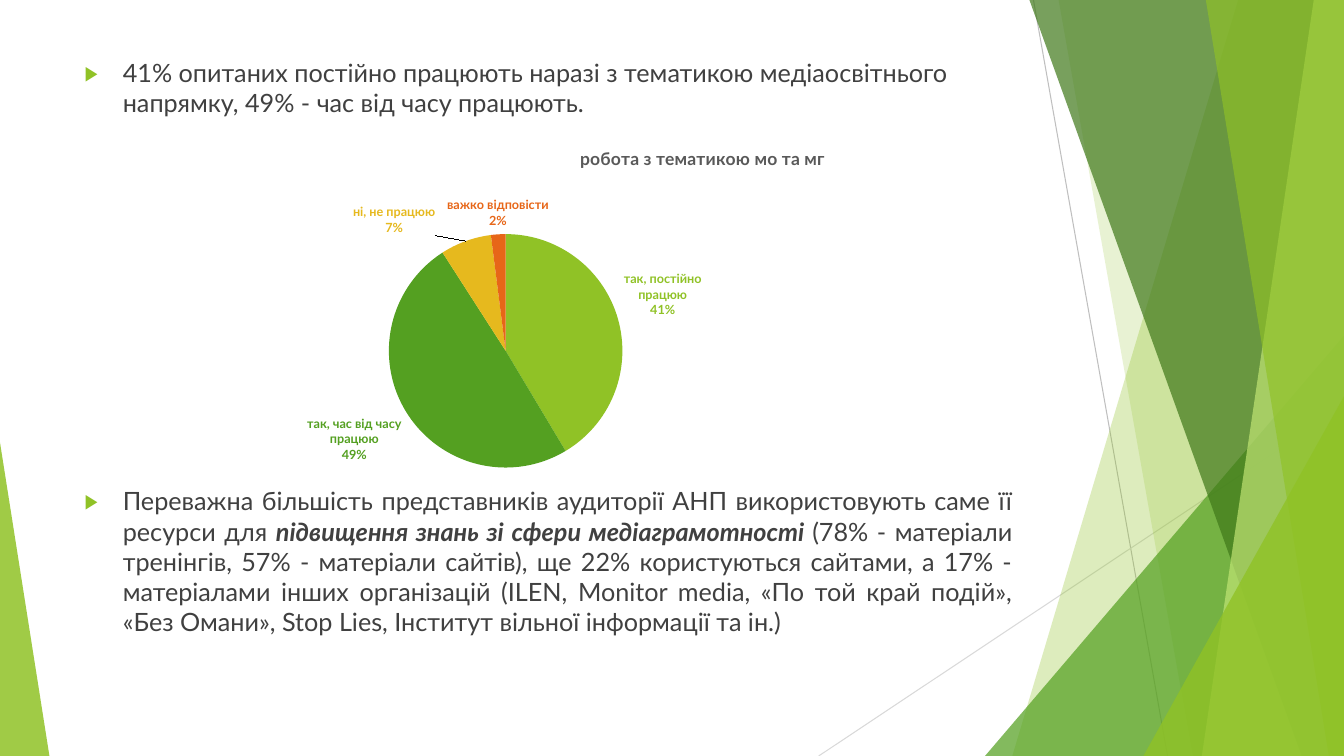
from lxml import etree
from pptx import Presentation
from pptx.chart.data import CategoryChartData
from pptx.dml.color import RGBColor
from pptx.enum.chart import XL_CHART_TYPE, XL_LABEL_POSITION
from pptx.enum.shapes import MSO_CONNECTOR, MSO_SHAPE
from pptx.enum.text import PP_ALIGN
from pptx.oxml.ns import qn
from pptx.util import Inches, Pt

PIE = XL_CHART_TYPE.PIE
OUTSIDE_END = XL_LABEL_POSITION.OUTSIDE_END
STRAIGHT = MSO_CONNECTOR.STRAIGHT
TRIANGLE = MSO_SHAPE.ISOSCELES_TRIANGLE
LEFT, JUSTIFY = PP_ALIGN.LEFT, PP_ALIGN.JUSTIFY

WIDTH, HEIGHT = 13.33, 7.5
FONT = "Lato"
COLORS = {
    "lime": "90C226", "green": "54A021", "forest": "3F7819", "pale": "C0E474",
    "yellow": "E6B91E", "orange": "E76618", "text": "404040", "title": "595959",
    "line": "BFBFBF", "light_line": "D9D9D9",
}
# Answer, percent, colour, sideways shift of the label
ANSWERS = [
    ("так, постійно працюю", 41, "lime", 0),
    ("так, час від часу працюю", 49, "green", 0),
    ("ні, не працюю", 7, "yellow", -0.05),
    ("важко відповісти", 2, "orange", 0),
]


def rgb(name):
    return RGBColor.from_string(COLORS[name])


def format_font(font, size, color, bold=False, italic=False):
    font.name, font.size = FONT, Pt(size)
    font.bold, font.italic = bold, italic
    font.color.rgb = rgb(color)


def add_text(paragraph, text, size=18, color="text", bold=False, italic=False):
    run = paragraph.add_run()
    run.text = text
    format_font(run.font, size, color, bold, italic)


def add_line(slide, start, end, color):
    line = slide.shapes.add_connector(STRAIGHT, *map(Inches, start + end))
    line.line.color.rgb = rgb(color)
    line.line.width = Pt(0.75)
    etree.SubElement(line._element.spPr, qn("a:effectLst"))


def paint(shape, color, opacity):
    shape.shadow.inherit = False
    shape.line.fill.background()
    shape.fill.solid()
    shape.fill.fore_color.rgb = rgb(color)
    color_element = shape._element.spPr.find(".//" + qn("a:srgbClr"))
    etree.SubElement(color_element, qn("a:alpha"), val=str(opacity * 1000))


def add_shard(slide, top_x, bottom_x, color, opacity):
    """Full-height panel from a slanted left edge to the slide's right edge."""
    builder = slide.shapes.build_freeform(Inches(top_x), 0)
    corners = [(WIDTH, 0), (WIDTH, HEIGHT), (bottom_x, HEIGHT)]
    builder.add_line_segments([(Inches(x), Inches(y)) for x, y in corners])
    paint(builder.convert_to_shape(), color, opacity)


def add_corner(slide, left, top, width, apex, color, opacity):
    """Right triangle standing on the slide's bottom edge."""
    box = map(Inches, (left, top, width, HEIGHT - top))
    shape = slide.shapes.add_shape(TRIANGLE, *box)
    shape.adjustments[0] = apex
    paint(shape, color, opacity)


def add_bullet(slide, top, height, runs, alignment=LEFT):
    box = slide.shapes.add_textbox(*map(Inches, (0.74, top, 9.4, height)))
    box.text_frame.word_wrap = True
    paragraph = box.text_frame.paragraphs[0]
    paragraph.alignment = alignment
    properties = paragraph._p.get_or_add_pPr()
    properties.set("marL", str(Inches(0.38)))
    properties.set("indent", str(-Inches(0.38)))
    bullet_color = etree.SubElement(properties, qn("a:buClr"))
    etree.SubElement(bullet_color, qn("a:srgbClr"), val=COLORS["lime"])
    etree.SubElement(properties, qn("a:buSzPct"), val="80000")
    etree.SubElement(properties, qn("a:buFont"), typeface=FONT)
    etree.SubElement(properties, qn("a:buChar"), char="▶")
    for text, emphasis in runs:
        add_text(paragraph, text, bold=emphasis, italic=emphasis)


def set_layout(parent, index, inner=False, mode=None, **fractions):
    """Place a chart part by fractions of the chart's size."""
    layout = parent.find(qn("c:layout"))
    if layout is not None:
        parent.remove(layout)
    layout = etree.Element(qn("c:layout"))
    parent.insert(index, layout)
    manual = etree.SubElement(layout, qn("c:manualLayout"))
    if inner:
        etree.SubElement(manual, qn("c:layoutTarget"), val="inner")
    if mode:
        for axis in ("xMode", "yMode"):
            etree.SubElement(manual, qn("c:" + axis), val=mode)
    for name, value in fractions.items():
        etree.SubElement(manual, qn("c:" + name), val=str(value))


def add_pie(slide):
    data = CategoryChartData()
    data.categories = [answer[0] for answer in ANSWERS]
    data.add_series("Відповіді", [answer[1] for answer in ANSWERS])
    box = map(Inches, (2.61, 1.27, 5.66, 3.51))
    chart = slide.shapes.add_chart(PIE, *box, data).chart
    format_font(chart.font, 9, "text")
    chart.has_legend = False

    # Title and plot area
    chart.has_title = True
    add_text(chart.chart_title.text_frame.paragraphs[0],
             "робота з тематикою мо та мг", size=12.5, color="title", bold=True)
    chart_element = chart._chartSpace.chart
    set_layout(chart_element.find(qn("c:title")), 1, mode="edge", x=0.55, y=0.04)
    set_layout(chart_element.plotArea, 0, inner=True, mode="edge",
               x=0.22, y=0.3, w=0.41, h=0.66)

    # Slices and their labels
    plot = chart.plots[0]
    plot.vary_by_categories = True
    for index, (_, _, color, _) in enumerate(ANSWERS):
        point = plot.series[0].points[index]
        point.format.fill.solid()
        point.format.fill.fore_color.rgb = rgb(color)
        point.format.line.fill.background()
        format_font(point.data_label.font, 9, color, bold=True)
        point.data_label.position = OUTSIDE_END
    labels = chart_element.iter(qn("c:dLbl"))
    for label, (_, _, _, shift) in zip(labels, ANSWERS):
        if shift:
            set_layout(label, 1, x=shift, y=0)
        for name, shown in (("Val", "0"), ("CatName", "1"), ("Percent", "1")):
            label.find(qn("c:show" + name)).set("val", shown)
        etree.SubElement(label, qn("c:separator")).text = "\n"


def add_decoration(slide):
    add_line(slide, (10.25, 0), (11.58, HEIGHT), "line")
    add_line(slide, (WIDTH, 4.03), (8.12, HEIGHT), "light_line")
    add_shard(slide, 12.28, 10.04, "lime", 30)
    add_shard(slide, 10.5, 11.83, "lime", 20)
    add_corner(slide, 9.77, 3.33, 3.56, 1, "green", 72)
    add_shard(slide, 10.21, 12.91, "forest", 70)
    add_shard(slide, 13.03, 11.92, "pale", 70)
    add_shard(slide, 11.96, 13.18, "lime", 65)
    add_corner(slide, 11.34, 3.93, 1.99, 1, "lime", 80)
    add_corner(slide, 0, 4.39, 0.49, 0, "lime", 85)


def main():
    presentation = Presentation()
    presentation.slide_width = Inches(WIDTH)
    presentation.slide_height = Inches(HEIGHT)
    slide = presentation.slides.add_slide(presentation.slide_layouts[6])

    add_decoration(slide)
    add_bullet(slide, 0.52, 0.7, [
        ("41% опитаних постійно працюють наразі з тематикою медіаосвітнього "
         "напрямку, 49% - час від часу працюють.", False),
    ])
    add_bullet(slide, 4.77, 1.6, [
        ("Переважна більшість представників аудиторії АНП використовують саме "
         "її ресурси для ", False),
        ("підвищення знань зі сфери медіаграмотності ", True),
        ("(78% - матеріали тренінгів, 57% - матеріали сайтів), ще 22% "
         "користуються сайтами, а 17% - матеріалами інших організацій "
         "(ILEN, Monitor media, «По той край подій», «Без Омани», Stop Lies, "
         "Інститут вільної інформації та ін.)", False),
    ], JUSTIFY)
    add_pie(slide)

    presentation.save("out.pptx")


if __name__ == "__main__":
    main()
